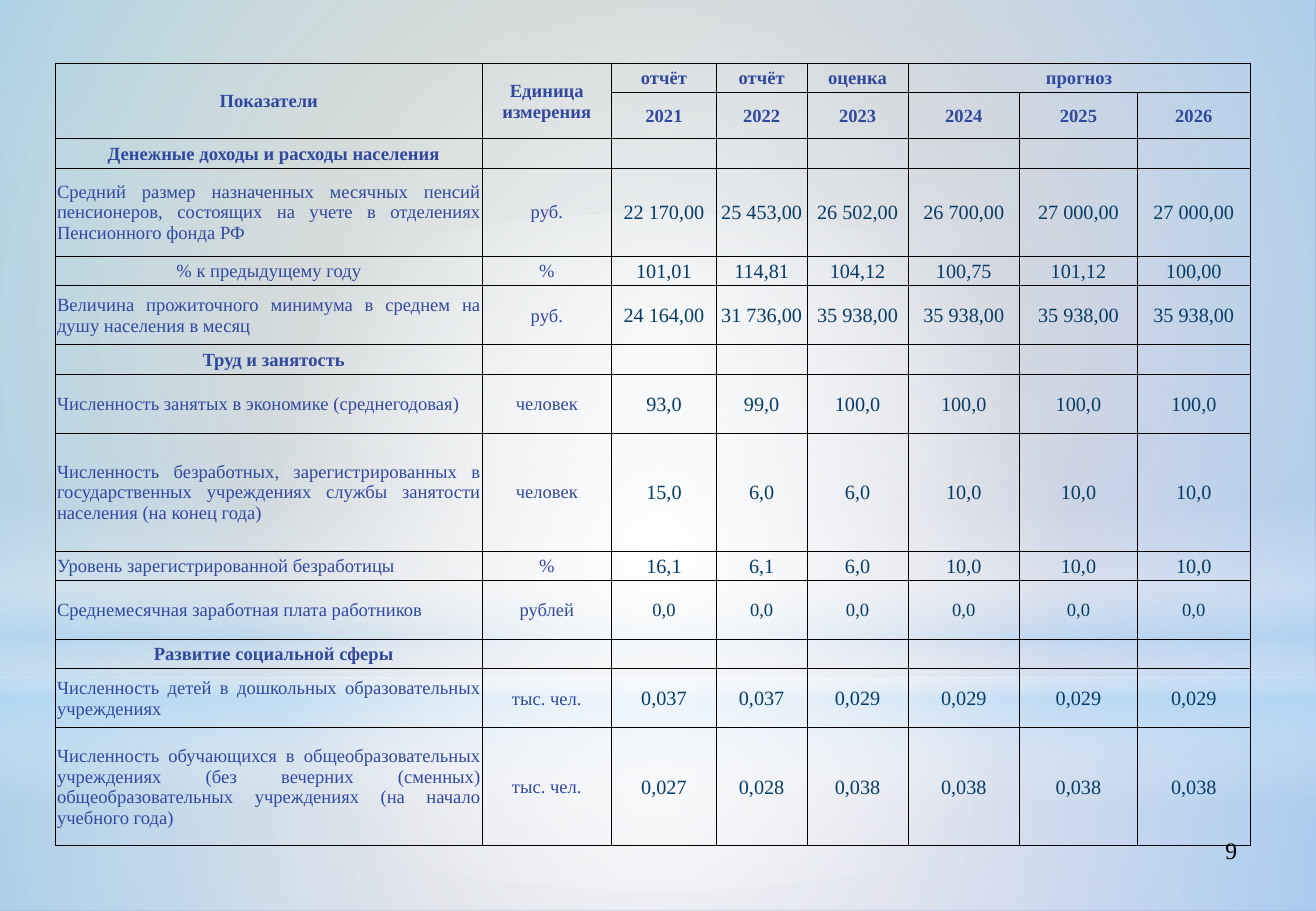
from lxml import etree
from pptx import Presentation
from pptx.enum.shapes import MSO_SHAPE
from pptx.enum.text import MSO_ANCHOR, PP_ALIGN
from pptx.oxml import parse_xml
from pptx.oxml.ns import nsdecls, qn
from pptx.dml.color import RGBColor
from pptx.util import Inches, Pt

RECT, OVAL = MSO_SHAPE.RECTANGLE, MSO_SHAPE.OVAL
MIDDLE = MSO_ANCHOR.MIDDLE
CENTER, JUSTIFY, RIGHT = PP_ALIGN.CENTER, PP_ALIGN.JUSTIFY, PP_ALIGN.RIGHT
COLORS = {"moss": "96AB94", "violet": "8488C4", "white": "FFFFFF",
          "sky": "B4DCFA", "label": "31489F", "value": "073C65", "black": "000000"}
FONT = "Times New Roman"
WIDTH, HEIGHT, HORIZON = 10.84, 7.5, 5.58

COLUMNS = [3.51, 1.07, 0.86, 0.75, 0.83, 0.92, 0.97, 0.93]
TABLE_HEIGHT = 6.31
STAGES = ["отчёт", "отчёт", "оценка", "прогноз"]
YEARS = range(2021, 2027)
INDICATORS = [
    (1, "Денежные доходы и расходы населения", "", []),
    (3, "Средний размер назначенных месячных пенсий пенсионеров, состоящих на учете "
        "в отделениях Пенсионного фонда РФ", "руб.",
     ["22 170,00", "25 453,00", "26 502,00", "26 700,00", "27 000,00", "27 000,00"]),
    (1, "% к предыдущему году", "%",
     ["101,01", "114,81", "104,12", "100,75", "101,12", "100,00"]),
    (2, "Величина прожиточного минимума в среднем на душу населения в месяц", "руб.",
     ["24 164,00", "31 736,00"] + ["35 938,00"] * 4),
    (1, "Труд и занятость", "", []),
    (2, "Численность занятых в экономике (среднегодовая)", "человек",
     ["93,0", "99,0"] + ["100,0"] * 4),
    (4, "Численность безработных, зарегистрированных в государственных учреждениях "
        "службы занятости населения (на конец года)", "человек",
     ["15,0", "6,0", "6,0"] + ["10,0"] * 3),
    (1, "Уровень зарегистрированной безработицы", "%",
     ["16,1", "6,1", "6,0"] + ["10,0"] * 3),
    (2, "Среднемесячная заработная плата работников", "рублей", ["0,0"] * 6),
    (1, "Развитие социальной сферы", "", []),
    (2, "Численность детей в дошкольных образовательных учреждениях", "тыс. чел.",
     ["0,037"] * 2 + ["0,029"] * 4),
    (4, "Численность обучающихся в общеобразовательных учреждениях (без вечерних "
        "(сменных) общеобразовательных учреждениях (на начало учебного года)",
     "тыс. чел.", ["0,027", "0,028"] + ["0,038"] * 4),
]


class Deck:
    def __init__(self):
        self.prs = Presentation()
        self.prs.slide_width, self.prs.slide_height = Inches(WIDTH), Inches(HEIGHT)
        self.s = self.prs.slides.add_slide(self.prs.slide_layouts[6])

    def gradient(self, fill, root, stops, angle=None):
        fill.gradient()
        old = root.find(".//" + qn("a:gradFill"))
        gs = "".join(
            f'<a:gs pos="{pos * 1000}"><a:srgbClr val="{COLORS[color]}">'
            f'<a:alpha val="{alpha * 1000}"/></a:srgbClr></a:gs>'
            for pos, color, alpha in stops)
        if angle is None:
            shade = ('<a:path path="circle"><a:fillToRect l="50000" t="50000" '
                     'r="50000" b="50000"/></a:path>')
        else:
            shade = f'<a:lin ang="{angle * 60000}" scaled="0"/>'
        old.getparent().replace(old, parse_xml(
            f'<a:gradFill {nsdecls("a")} rotWithShape="1">'
            f'<a:gsLst>{gs}</a:gsLst>{shade}</a:gradFill>'))

    def background(self, stops, angle):
        self.gradient(self.s.background.fill, self.s._element, stops, angle)

    def glow(self, kind, top, height, stops, angle=None):
        sp = self.s.shapes.add_shape(kind, 0, Inches(top), Inches(WIDTH), Inches(height))
        sp.shadow.inherit = False
        sp.line.fill.background()
        self.gradient(sp.fill, sp._element.spPr, stops, angle)

    def set_text(self, tf, text, size, color, align, bold=False):
        tf.text = text
        p = tf.paragraphs[0]
        p.alignment = align
        for r in p.runs:
            r.font.name, r.font.size, r.font.bold = FONT, Pt(size), bold
            r.font.color.rgb = RGBColor.from_string(COLORS[color])
        if not text:
            etree.SubElement(p._p, qn("a:endParaRPr"), sz=str(size * 100))

    def text(self, left, top, width, height, text, size, color, align):
        box = self.s.shapes.add_textbox(*map(Inches, (left, top, width, height)))
        box.text_frame.word_wrap = True
        self.set_text(box.text_frame, text, size, color, align)

    def table(self, left, top, columns, heights):
        frame = self.s.shapes.add_table(
            len(heights), len(columns), Inches(left), Inches(top),
            Inches(sum(columns)), Inches(sum(heights)))
        table = frame.table
        table.first_row = table.horz_banding = False
        for column, width in zip(table.columns, columns):
            column.width = Inches(width)
        for row, height in zip(table.rows, heights):
            row.height = Inches(height)
        for cell in table.iter_cells():
            self.cell(cell, "")
        return table

    def cell(self, cell, text, size=11, color="label", align=CENTER, bold=False, indent=0.01):
        cell.fill.background()
        cell.vertical_anchor = MIDDLE
        cell.margin_left = Inches(indent)
        cell.margin_right = cell.margin_top = Inches(0.01)
        cell.margin_bottom = 0
        tcPr = cell._tc.get_or_add_tcPr()
        if tcPr.find(qn("a:lnL")) is None:
            for i, side in enumerate("LRTB"):
                tcPr.insert(i, parse_xml(
                    f'<a:ln{side} {nsdecls("a")} w="6350"><a:solidFill>'
                    f'<a:srgbClr val="{COLORS["black"]}"/></a:solidFill></a:ln{side}>'))
        for old in cell._tc.findall(".//" + qn("a:endParaRPr")):
            old.getparent().remove(old)
        self.set_text(cell.text_frame, text, size, color, align, bold)


def main():
    deck = Deck()
    deck.background([(0, "moss", 100), (100, "violet", 100)], 45)
    deck.glow(RECT, HORIZON, HEIGHT - HORIZON,
              [(0, "white", 91), (37, "white", 76), (100, "sky", 79)])
    deck.glow(RECT, 0, HORIZON, [(0, "white", 89), (48, "white", 62), (100, "sky", 79)])
    deck.glow(RECT, 4.12, 2.5,
              [(0, "white", 0), (29, "white", 30), (45, "sky", 40),
               (55, "white", 26), (65, "sky", 60), (100, "white", 0)], 90)
    deck.glow(OVAL, 1.75, HORIZON, [(0, "white", 100), (56, "white", 0)])
    deck.text(7.76, 6.83, 2.53, 0.52, "9", 14, "black", RIGHT)

    lines = [1, 1] + [row[0] for row in INDICATORS]
    unit = TABLE_HEIGHT / sum(lines)
    table = deck.table(0.46, 0.52, COLUMNS, [n * unit for n in lines])
    for col, title in enumerate(["Показатели", "Единица измерения"]):
        table.cell(0, col).merge(table.cell(1, col))
        deck.cell(table.cell(0, col), title, bold=True)
    table.cell(0, 5).merge(table.cell(0, 7))
    for col, stage in enumerate(STAGES, 2):
        deck.cell(table.cell(0, col), stage, bold=True)
    for col, year in enumerate(YEARS, 2):
        deck.cell(table.cell(1, col), str(year), bold=True)

    for row, (_, name, measure, values) in enumerate(INDICATORS, 2):
        if not values:
            deck.cell(table.cell(row, 0), name, bold=True, indent=0.09)
            continue
        align = CENTER if name.startswith("%") else JUSTIFY
        deck.cell(table.cell(row, 0), name, align=align)
        deck.cell(table.cell(row, 1), measure)
        size = 11 if measure == "рублей" else 12
        for col, value in enumerate(values, 2):
            deck.cell(table.cell(row, col), value, size, "value")
    deck.prs.save("out.pptx")


if __name__ == "__main__":
    main()
